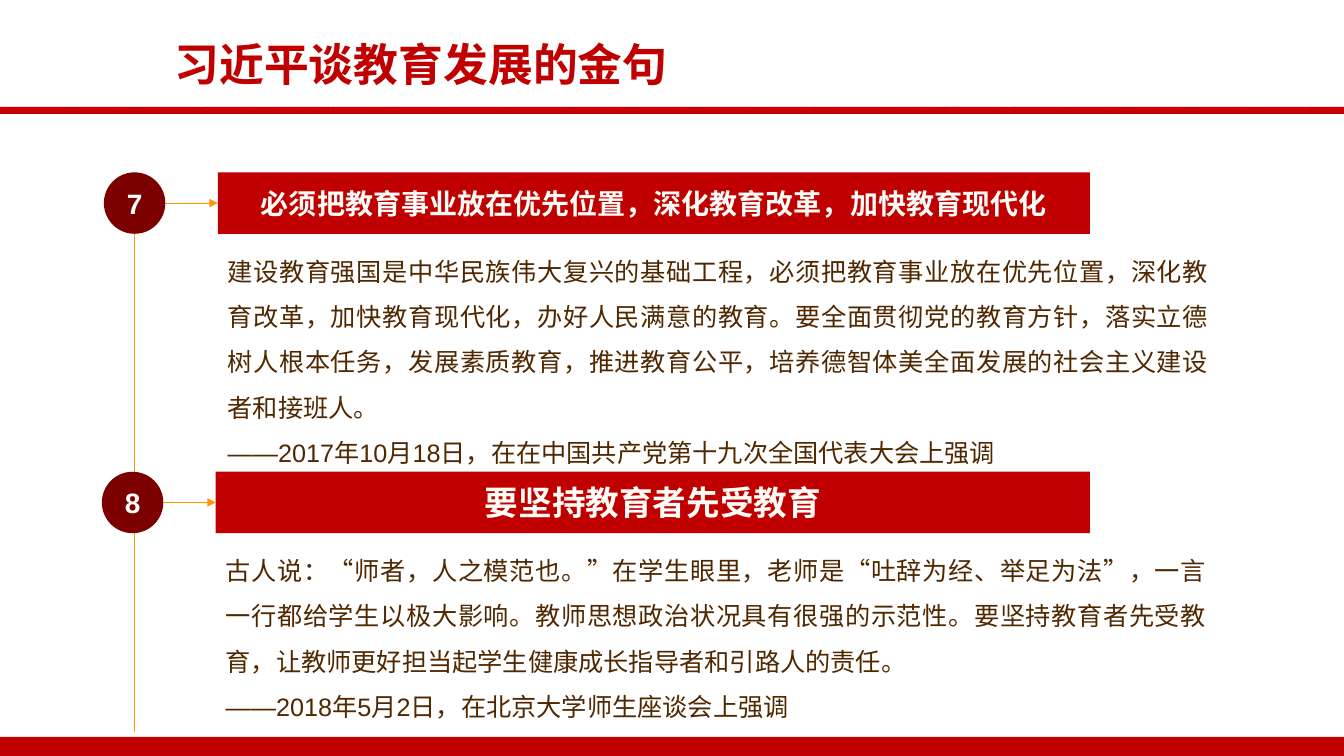
from lxml import etree
from pptx import Presentation
from pptx.dml.color import RGBColor
from pptx.enum.dml import MSO_PATTERN
from pptx.enum.shapes import MSO_CONNECTOR, MSO_SHAPE
from pptx.enum.text import MSO_ANCHOR, MSO_AUTO_SIZE, PP_ALIGN
from pptx.oxml.ns import qn
from pptx.util import Inches, Pt

RECT, OVAL = MSO_SHAPE.RECTANGLE, MSO_SHAPE.OVAL
LINE = MSO_CONNECTOR.STRAIGHT
LEFT, CENTER, JUST = PP_ALIGN.LEFT, PP_ALIGN.CENTER, PP_ALIGN.JUSTIFY
TOP, MIDDLE = MSO_ANCHOR.TOP, MSO_ANCHOR.MIDDLE
CJK = "Noto Sans CJK SC"
RED, DARK, BROWN, AMBER = "C00000", "7D0000", "502800", "FF9500"
WIDE, HIGH = 13.33, 7.5
SIZE = 0.61   # height of badges and banners
EDGE = 10.81  # right end of the banners

prs = Presentation()
prs.slide_width, prs.slide_height = Inches(WIDE), Inches(HIGH)
slide = prs.slides.add_slide(prs.slide_layouts[5])
shapes = slide.shapes


def write(shape, lines, size, color, bold, align, anchor, font="Arial"):
    """Fill a shape with paragraphs that share one format."""
    frame = shape.text_frame
    frame.text = "\n".join(lines)
    frame.word_wrap = True
    frame.auto_size = MSO_AUTO_SIZE.NONE
    frame.vertical_anchor = anchor
    for para in frame.paragraphs:
        para.alignment = align
        for run in para.runs:
            run.font.name, run.font.size, run.font.bold = font, Pt(size), bold
            run.font.color.rgb = RGBColor.from_string(color)
            east = etree.SubElement(run.font._element, qn("a:ea"))
            east.set("typeface", CJK)


def draw(kind, x, y, w, h, color):
    """Add a plain shape, or a thin line from (x, y) to (x + w, y + h)."""
    if kind is LINE:  # by identity: LINE and RECT share the value 1
        item = shapes.add_connector(
            kind, Inches(x), Inches(y), Inches(x + w), Inches(y + h))
        item.line.color.rgb = RGBColor.from_string(color)
        item.line.width = Pt(0.5)
        etree.SubElement(item._element.spPr, qn("a:effectLst"))
    else:
        item = shapes.add_shape(kind, Inches(x), Inches(y), Inches(w), Inches(h))
        item.shadow.inherit = False
        item.fill.solid()
        item.fill.fore_color.rgb = RGBColor.from_string(color)
        item.line.fill.background()
    return item


# Title and the bars of the page
title = shapes.title
title.left, title.top = Inches(1.63), Inches(0.31)
title.width, title.height = Inches(6.14), Inches(0.64)
write(title, ["习近平谈教育发展的金句"], 32, RED, True, LEFT, TOP, CJK)
draw(RECT, 0, HIGH - 0.19, WIDE, 0.19, RED)
rule = draw(RECT, 0, 1.06, WIDE, 0.07, RED)
rule.fill.patterned()
rule.fill.pattern = MSO_PATTERN.DARK_UPWARD_DIAGONAL
rule.fill.fore_color.rgb = RGBColor.from_string("FF0000")
rule.fill.back_color.rgb = RGBColor.from_string(RED)

# Quotes along the timeline: number, left, top, text height, heading, size, lines
quotes = [
    ("7", 1.03, 1.71, 2.32,
     "必须把教育事业放在优先位置，深化教育改革，加快教育现代化", 20,
     ["建设教育强国是中华民族伟大复兴的基础工程，必须把教育事业放在优先位置，"
      "深化教育改革，加快教育现代化，办好人民满意的教育。要全面贯彻党的教育方针，"
      "落实立德树人根本任务，发展素质教育，推进教育公平，"
      "培养德智体美全面发展的社会主义建设者和接班人。",
      "——2017年10月18日，在在中国共产党第十九次全国代表大会上强调"]),
    ("8", 1.01, 4.68, 1.86,
     "要坚持教育者先受教育", 24,
     ["古人说：“师者，人之模范也。”在学生眼里，老师是“吐辞为经、举足为法”，"
      "一言一行都给学生以极大影响。教师思想政治状况具有很强的示范性。"
      "要坚持教育者先受教育，让教师更好担当起学生健康成长指导者和引路人的责任。",
      "——2018年5月2日，在北京大学师生座谈会上强调"]),
]
draw(LINE, 1.33, 2.32, 0, 4.94, AMBER)
for number, x, y, tall, head, size, lines in quotes:
    start = x + 1.13
    body = shapes.add_textbox(
        Inches(start), Inches(y + SIZE + 0.02), Inches(9.93), Inches(tall))
    write(body, lines, 18, BROWN, False, JUST, TOP)
    for para in body.text_frame.paragraphs:
        para.line_spacing = 1.5

    badge = draw(OVAL, x, y, SIZE, SIZE, DARK)
    write(badge, [number], 20, "FFFFFF", True, CENTER, MIDDLE)
    banner = draw(RECT, start, y, EDGE - start, SIZE, RED)
    write(banner, [head], size, "FFFDF8", True, CENTER, MIDDLE)

    arrow = draw(LINE, x + SIZE, y + SIZE / 2, 0.52, 0, AMBER)
    arrow.end_connect(banner, 1)
    tip = etree.SubElement(arrow._element.spPr.find(qn("a:ln")), qn("a:tailEnd"))
    tip.set("type", "triangle")

prs.save("out.pptx")
